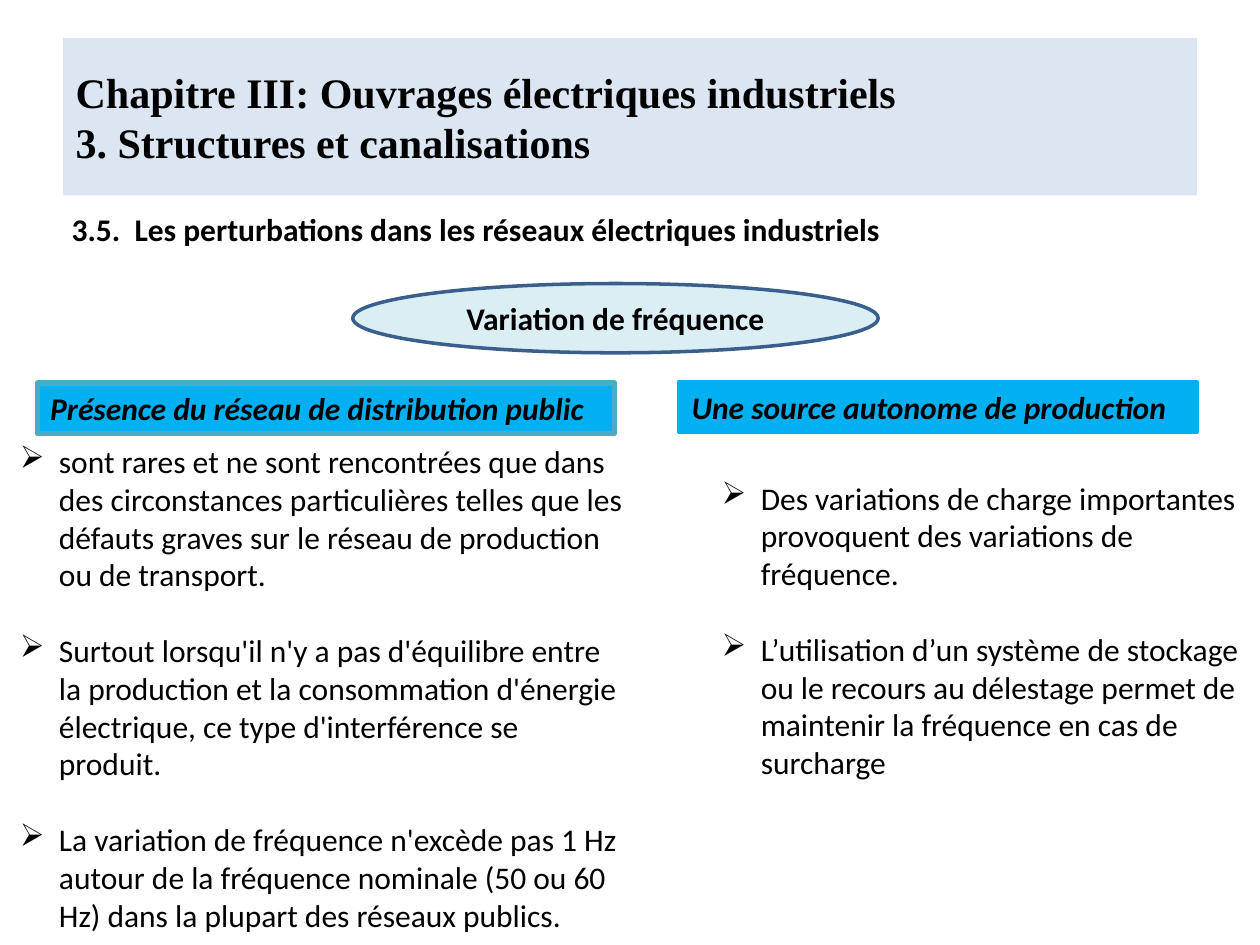
import pptx
import pptx.dml.color
import pptx.enum.shapes
import pptx.enum.text
import pptx.oxml.ns
import pptx.util
from lxml import etree

SHAPES = pptx.enum.shapes.MSO_SHAPE
ALIGN = pptx.enum.text.PP_ALIGN
ANCHOR = pptx.enum.text.MSO_ANCHOR
inches = pptx.util.Inches


def color(hex_value):
    return pptx.dml.color.RGBColor.from_string(hex_value)


def write(para, text, size=18, name="Calibri", bold=False, italic=False, hang=0, bullet=None):
    """Add one run; hang is the hanging indent in inches."""
    if hang:
        properties = para._p.get_or_add_pPr()
        properties.set("marL", str(inches(hang)))
        properties.set("indent", str(-inches(hang)))
        if bullet:
            mark = etree.SubElement(properties, pptx.oxml.ns.qn("a:buChar"))
            mark.set("char", bullet)
    span = para.add_run()
    span.text = text
    span.font.size = pptx.util.Pt(size)
    span.font.name = name
    span.font.bold = bold
    span.font.italic = italic
    span.font.color.rgb = color("000000")


deck = pptx.Presentation()
deck.slide_width = inches(10)
deck.slide_height = inches(7.5)
page = deck.slides.add_slide(deck.slide_layouts[5])

# Chapter title
title = page.shapes.title
title.left, title.top, title.width, title.height = map(inches, (0.5, 0.3, 9, 1.25))
title.fill.solid()
title.fill.fore_color.rgb = color("DCE6F2")
title.text_frame.vertical_anchor = ANCHOR.MIDDLE
para = title.text_frame.paragraphs[0]
para.alignment = ALIGN.LEFT
write(para, "Chapitre III: Ouvrages électriques industriels", 24, "Times New Roman", bold=True)
para.add_line_break()
write(para, "3. Structures et canalisations", 24, "Times New Roman", bold=True)

# Section heading: the tab jumps to the hanging indent
heading = page.shapes.add_textbox(*map(inches, (0.47, 1.62, 8.46, 0.4)))
heading.text_frame.word_wrap = True
write(heading.text_frame.paragraphs[0],
      "3.5.\tLes perturbations dans les réseaux électriques industriels", bold=True, hang=0.5)

# Topic and the two column headers
labels = [
    ("Variation de fréquence", SHAPES.OVAL, (2.8, 2.25, 4.17, 0.55),
     "DBEEF4", "3A5F8C", 2, ALIGN.CENTER, False),
    ("Présence du réseau de distribution public", SHAPES.RECTANGLE, (0.3, 3.04, 4.58, 0.4),
     "00B0F0", "4BACC6", 3, ALIGN.LEFT, True),
    ("Une source autonome de production", SHAPES.RECTANGLE, (5.39, 3.03, 4.11, 0.4),
     "00B0F0", "00B0F0", 2.25, ALIGN.LEFT, True),
]
for text, kind, place, fill, line, weight, alignment, italic in labels:
    label = page.shapes.add_shape(kind, *map(inches, place))
    label.shadow.inherit = False
    label.fill.solid()
    label.fill.fore_color.rgb = color(fill)
    label.line.color.rgb = color(line)
    label.line.width = pptx.util.Pt(weight)
    label.text_frame.word_wrap = True
    label.text_frame.vertical_anchor = ANCHOR.MIDDLE
    para = label.text_frame.paragraphs[0]
    para.alignment = alignment
    write(para, text, bold=True, italic=italic)

# Bulleted columns, with one line of space between points
columns = [
    ((0.06, 3.46, 5, 3.74), [
        "sont rares et ne sont rencontrées que dans des circonstances particulières telles que "
        "les défauts graves sur le réseau de production ou de transport.",
        "Surtout lorsqu'il n'y a pas d'équilibre entre la production et la consommation "
        "d'énergie électrique, ce type d'interférence se produit.",
        "La variation de fréquence n'excède pas 1 Hz autour de la fréquence nominale "
        "(50 ou 60 Hz) dans la plupart des réseaux publics.",
    ]),
    ((5.63, 3.75, 4.34, 2.83), [
        "Des variations de charge importantes provoquent des variations de fréquence.",
        "L’utilisation d’un système de stockage ou le recours au délestage permet de "
        "maintenir la fréquence en cas de surcharge",
    ]),
]
for place, points in columns:
    box = page.shapes.add_textbox(*map(inches, place))
    box.text_frame.word_wrap = True
    for index, point in enumerate(points):
        para = box.text_frame.add_paragraph() if index else box.text_frame.paragraphs[0]
        if index:
            para.space_before = pptx.util.Pt(21.6)
        write(para, point, hang=0.31, bullet="➢")

deck.save("out.pptx")
